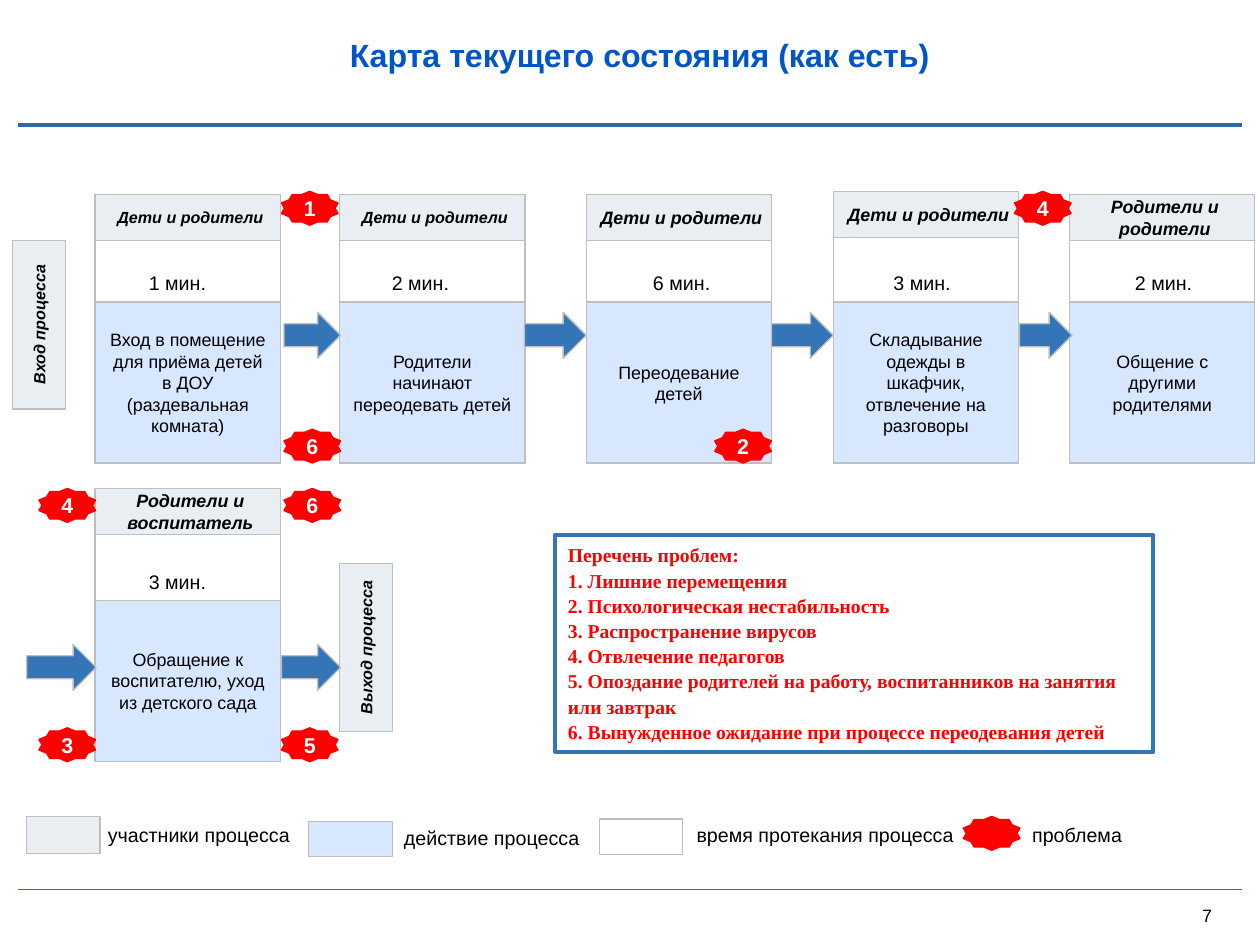
from pptx import Presentation
from pptx.dml.color import RGBColor
from pptx.enum.shapes import MSO_CONNECTOR, MSO_SHAPE
from pptx.enum.text import MSO_ANCHOR, PP_ALIGN
from pptx.oxml.ns import qn
from pptx.util import Cm, Pt
from lxml import etree

RECTANGLE = MSO_SHAPE.RECTANGLE
ARROW = MSO_SHAPE.RIGHT_ARROW
STAR = MSO_SHAPE.STAR_10_POINT
STRAIGHT = MSO_CONNECTOR.STRAIGHT
TOP, MIDDLE = MSO_ANCHOR.TOP, MSO_ANCHOR.MIDDLE
LEFT, CENTER = PP_ALIGN.LEFT, PP_ALIGN.CENTER

BLACK = RGBColor(0x00, 0x00, 0x00)
WHITE = RGBColor(0xFF, 0xFF, 0xFF)
RED = RGBColor(0xFF, 0x00, 0x00)
TITLE_BLUE = RGBColor(0x00, 0x55, 0xC8)
RULE_BLUE = RGBColor(0x2E, 0x69, 0xA5)
ARROW_BLUE = RGBColor(0x33, 0x75, 0xB7)
ACTION_BLUE = RGBColor(0xD6, 0xE7, 0xFF)
PALE_GRAY = RGBColor(0xE9, 0xEE, 0xF3)
BORDER_GRAY = RGBColor(0xBF, 0xBF, 0xBF)


def add_box(kind, left, top, width, height, fill, line=BORDER_GRAY, line_width=0.75):
    shape = slide.shapes.add_shape(kind, Cm(left), Cm(top), Cm(width), Cm(height))
    shape.shadow.inherit = False
    shape.fill.solid()
    shape.fill.fore_color.rgb = fill
    shape.line.color.rgb = line
    shape.line.width = Pt(line_width)
    return shape


def write_text(shape, text, size=11, color=BLACK, bold=False, italic=False, font="Arial",
               align=LEFT, anchor=TOP, margins=(0.25, 0.13, 0.25, 0.13), spacing=1.0):
    """Fill a shape with text, one paragraph per line; margins are left, top, right, bottom."""
    frame = shape.text_frame
    frame.word_wrap = True
    frame.vertical_anchor = anchor
    (frame.margin_left, frame.margin_top,
     frame.margin_right, frame.margin_bottom) = [Cm(margin) for margin in margins]
    frame.text = text
    for paragraph in frame.paragraphs:
        paragraph.alignment = align
        paragraph.line_spacing = spacing
        paragraph.font.name = font
        paragraph.font.size = Pt(size)
        paragraph.font.bold = bold
        paragraph.font.italic = italic
        paragraph.font.color.rgb = color


presentation = Presentation()
presentation.slide_width = Cm(24.89)
presentation.slide_height = Cm(18.67)
slide = presentation.slides.add_slide(presentation.slide_layouts[6])

# Title, rules and page number
for y, rule_width in [(2.46, 2.25), (17.58, 0.75)]:
    rule = slide.shapes.add_connector(STRAIGHT, Cm(0.35), Cm(y), Cm(24.54), Cm(y))
    rule.line.color.rgb = RULE_BLUE
    rule.line.width = Pt(rule_width)
    etree.SubElement(rule.element.spPr, qn("a:effectLst"))

title = slide.shapes.add_textbox(Cm(4.17), Cm(0.56), Cm(16.94), Cm(1.02))
write_text(title, "Карта текущего состояния (как есть)", size=18, color=TITLE_BLUE,
           bold=True, align=CENTER)
page_number = slide.shapes.add_textbox(Cm(23.75), Cm(17.88), Cm(0.58), Cm(0.43))
write_text(page_number, "7", size=10, margins=(0, 0, 0, 0))

# List of problems
problems = [
    "Перечень проблем:",
    "1. Лишние перемещения",
    "2. Психологическая нестабильность",
    "3. Распространение вирусов",
    "4. Отвлечение педагогов",
    "5. Опоздание родителей на работу, воспитанников на занятия или завтрак",
    "6. Вынужденное ожидание при процессе переодевания детей",
]
problem_box = add_box(RECTANGLE, 10.97, 10.57, 11.81, 4.29, WHITE, ARROW_BLUE, 2)
write_text(problem_box, "\n".join(problems), color=RED, bold=True,
           font="Times New Roman", spacing=1.07)

# Entry and exit of the process
for left, top, text in [(0.25, 4.75, "Вход процесса"), (6.71, 11.13, "Выход процесса")]:
    gate = add_box(RECTANGLE, left, top, 1.04, 3.33, PALE_GRAY)
    write_text(gate, text, size=9, bold=True, italic=True, align=CENTER, anchor=MIDDLE,
               margins=(0.1, 0.1, 0.1, 0.1))
    gate.element.txBody.bodyPr.set("vert", "vert270")

# Steps: left, top, header top, action top, header size, people, time left, time, action
STEP_WIDTH = 3.66
steps = [
    (1.88, 3.84, 3.84, 5.97, 9, "Дети и родители", 2.69, "1 мин.",
     "Вход в помещение для приёма детей в ДОУ (раздевальная комната)"),
    (6.71, 3.84, 3.84, 5.97, 9, "Дети и родители", 7.49, "2 мин.",
     "Родители начинают переодевать детей"),
    (11.58, 3.84, 3.84, 5.97, 10, "Дети и родители", 12.65, "6 мин.",
     "Переодевание детей"),
    (16.46, 3.84, 3.78, 5.97, 10, "Дети и родители", 17.4, "3 мин.",
     "Складывание одежды в шкафчик, отвлечение на разговоры"),
    (21.13, 3.84, 3.84, 5.97, 10, "Родители и родители", 22.17, "2 мин.",
     "Общение с другими родителями"),
    (1.88, 9.65, 9.65, 11.86, 10, "Родители и воспитатель", 2.69, "3 мин.",
     "Обращение к воспитателю, уход из детского сада"),
]
for (left, top, header_top, action_top, header_size, people,
     time_left, time, action) in steps:
    add_box(RECTANGLE, left, top, STEP_WIDTH, 5.31, WHITE)
    action_box = add_box(RECTANGLE, left, action_top, STEP_WIDTH, 3.18, ACTION_BLUE)
    write_text(action_box, action, size=10, align=CENTER, anchor=MIDDLE)
    header = add_box(RECTANGLE, left, header_top, STEP_WIDTH, 0.91, PALE_GRAY)
    write_text(header, people, size=header_size, bold=True, italic=True, align=CENTER,
               anchor=MIDDLE, margins=(0.2, 0.1, 0.1, 0.1))
    time_label = slide.shapes.add_textbox(Cm(time_left), Cm(action_top - 0.74),
                                          Cm(1.78), Cm(0.74))
    write_text(time_label, time)

# Arrows between the steps
arrows = [(5.61, 6.17, 1.12), (10.36, 6.17, 1.22), (15.24, 6.17, 1.22),
          (20.14, 6.17, 1.04), (0.53, 12.73, 1.37), (5.56, 12.73, 1.17)]
for left, top, width in arrows:
    add_box(ARROW, left, top, width, 0.91, ARROW_BLUE)

# Problem marks, the last one without a number for the legend
marks = [("1", 5.56, 3.78), ("4", 20.04, 3.78), ("6", 5.61, 8.48), ("2", 14.12, 8.48),
         ("4", 0.77, 9.65), ("6", 5.61, 9.65), ("3", 0.77, 14.38), ("5", 5.56, 14.38),
         ("", 19.03, 16.13)]
for number, left, top in marks:
    mark = add_box(STAR, left, top, 1.12, 0.67, RED, RED)
    if number:
        write_text(mark, number, size=12, color=WHITE, bold=True, align=CENTER,
                   anchor=MIDDLE)

# Legend
swatches = [(0.53, 16.13, 1.45, 0.74, PALE_GRAY), (6.1, 16.23, 1.65, 0.69, ACTION_BLUE),
            (11.84, 16.18, 1.65, 0.71, WHITE)]
for left, top, width, height, fill in swatches:
    add_box(RECTANGLE, left, top, width, height, fill)

captions = [("участники процесса", 1.88, 16.13, 5.64),
            ("действие процесса", 7.73, 16.18, 5.1),
            ("время протекания процесса", 13.51, 16.13, 6.53),
            ("проблема", 20.14, 16.13, 3.3)]
for text, left, top, width in captions:
    caption = slide.shapes.add_textbox(Cm(left), Cm(top), Cm(width), Cm(0.74))
    write_text(caption, text)

presentation.save("out.pptx")
